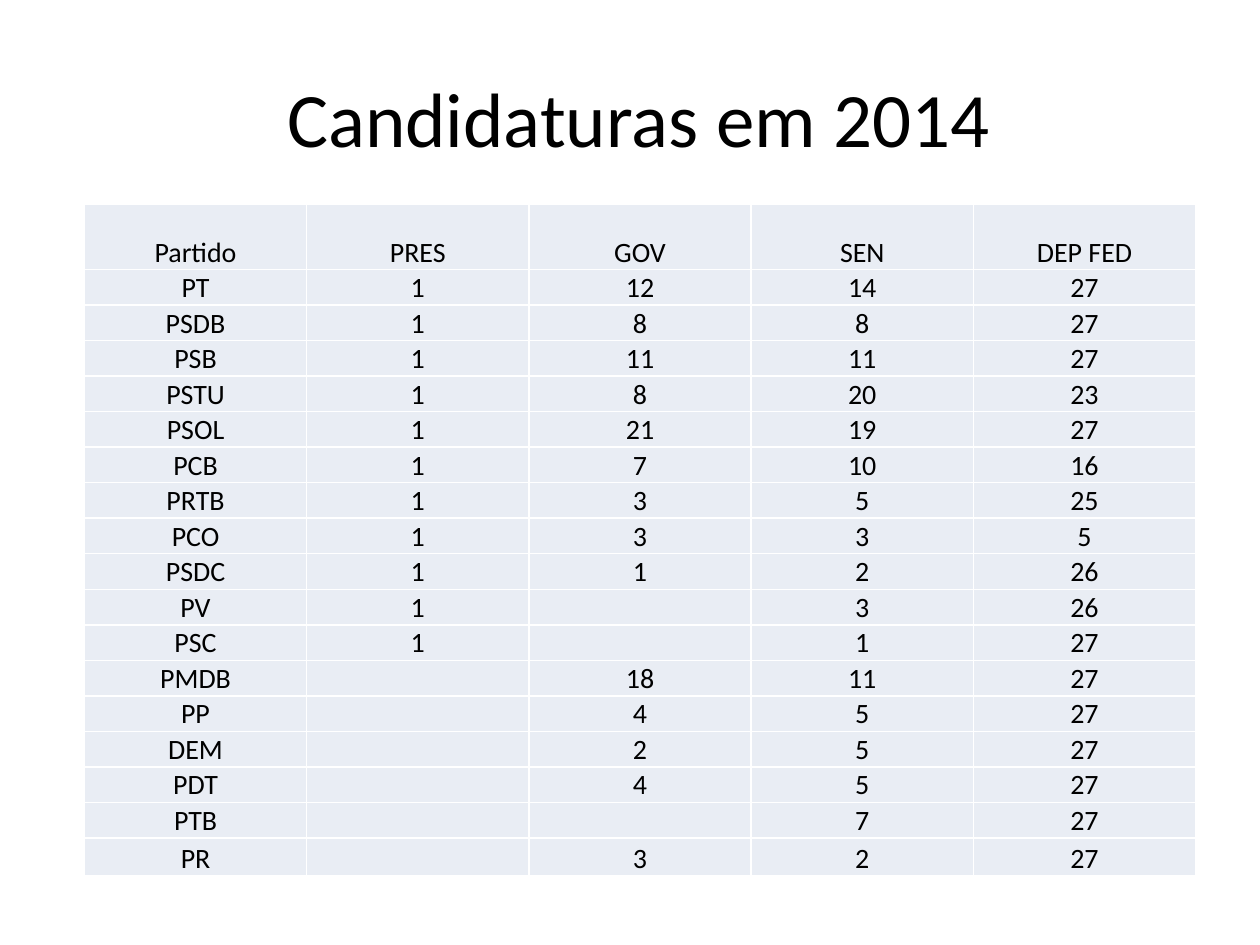
from dataclasses import dataclass

from lxml.etree import SubElement
from pptx import Presentation
from pptx.dml.color import RGBColor
from pptx.enum.text import MSO_ANCHOR, PP_ALIGN
from pptx.oxml.ns import qn
from pptx.util import Inches, Pt


@dataclass(frozen=True)
class Theme:
    font: str = "Calibri"
    ink: str = "000000"
    cell: str = "E9EDF4"
    rule: str = "FFFFFF"
    title: int = 44
    body: int = 16
    line: int = 1


theme = Theme()


def write(frame, text, size=theme.body, color=theme.ink, align=PP_ALIGN.CENTER):
    para = frame.paragraphs[0]
    para.alignment = align
    if not text:
        # An empty cell still needs its type size to keep the row height
        SubElement(para._p, qn("a:endParaRPr"), sz=str(size * 100))
        return
    run = para.add_run()
    run.text = text
    run.font.name = theme.font
    run.font.size = Pt(size)
    run.font.bold = False
    run.font.color.rgb = RGBColor.from_string(color)


def border(cell):
    props = cell._tc.get_or_add_tcPr()
    for side in ("lnL", "lnR", "lnT", "lnB"):
        line = SubElement(props, qn(f"a:{side}"), w=str(Pt(theme.line)))
        fill = SubElement(line, qn("a:solidFill"))
        SubElement(fill, qn("a:srgbClr"), val=theme.rule)


deck = Presentation()
deck.slide_width, deck.slide_height = Inches(10), Inches(7.5)
slide = deck.slides.add_slide(deck.slide_layouts[5])

# Title
title = slide.shapes.title
title.left, title.top = Inches(0.5), Inches(0.3)
title.width, title.height = Inches(9), Inches(1.25)
title.text_frame.vertical_anchor = MSO_ANCHOR.MIDDLE
write(title.text_frame, " Candidaturas em 2014", size=theme.title)

# Candidates by party and office
rows = [
    ("Partido", "PRES", "GOV", "SEN", "DEP FED"),
    ("PT", "1", "12", "14", "27"),
    ("PSDB", "1", "8", "8", "27"),
    ("PSB", "1", "11", "11", "27"),
    ("PSTU", "1", "8", "20", "23"),
    ("PSOL", "1", "21", "19", "27"),
    ("PCB", "1", "7", "10", "16"),
    ("PRTB", "1", "3", "5", "25"),
    ("PCO", "1", "3", "3", "5"),
    ("PSDC", "1", "1", "2", "26"),
    ("PV", "1", "", "3", "26"),
    ("PSC", "1", "", "1", "27"),
    ("PMDB", "", "18", "11", "27"),
    ("PP", "", "4", "5", "27"),
    ("DEM", "", "2", "5", "27"),
    ("PDT", "", "4", "5", "27"),
    ("PTB", "", "", "7", "27"),
    ("PR", "", "3", "2", "27"),
]
highs = [0.52] + [0.28] * (len(rows) - 2) + [0.3]

# Table
table = slide.shapes.add_table(
    len(rows), len(rows[0]),
    Inches(0.67), Inches(1.62), Inches(8.82), Inches(sum(highs)),
).table
table.first_row = False
table.horz_banding = False

for r, (row, high) in enumerate(zip(rows, highs)):
    table.rows[r].height = Inches(high)
    for c, text in enumerate(row):
        cell = table.cell(r, c)
        cell.margin_left = cell.margin_right = cell.margin_top = Inches(0.01)
        cell.margin_bottom = 0
        cell.vertical_anchor = MSO_ANCHOR.BOTTOM
        border(cell)
        cell.fill.solid()
        cell.fill.fore_color.rgb = RGBColor.from_string(theme.cell)
        write(cell.text_frame, text)

deck.save("out.pptx")
